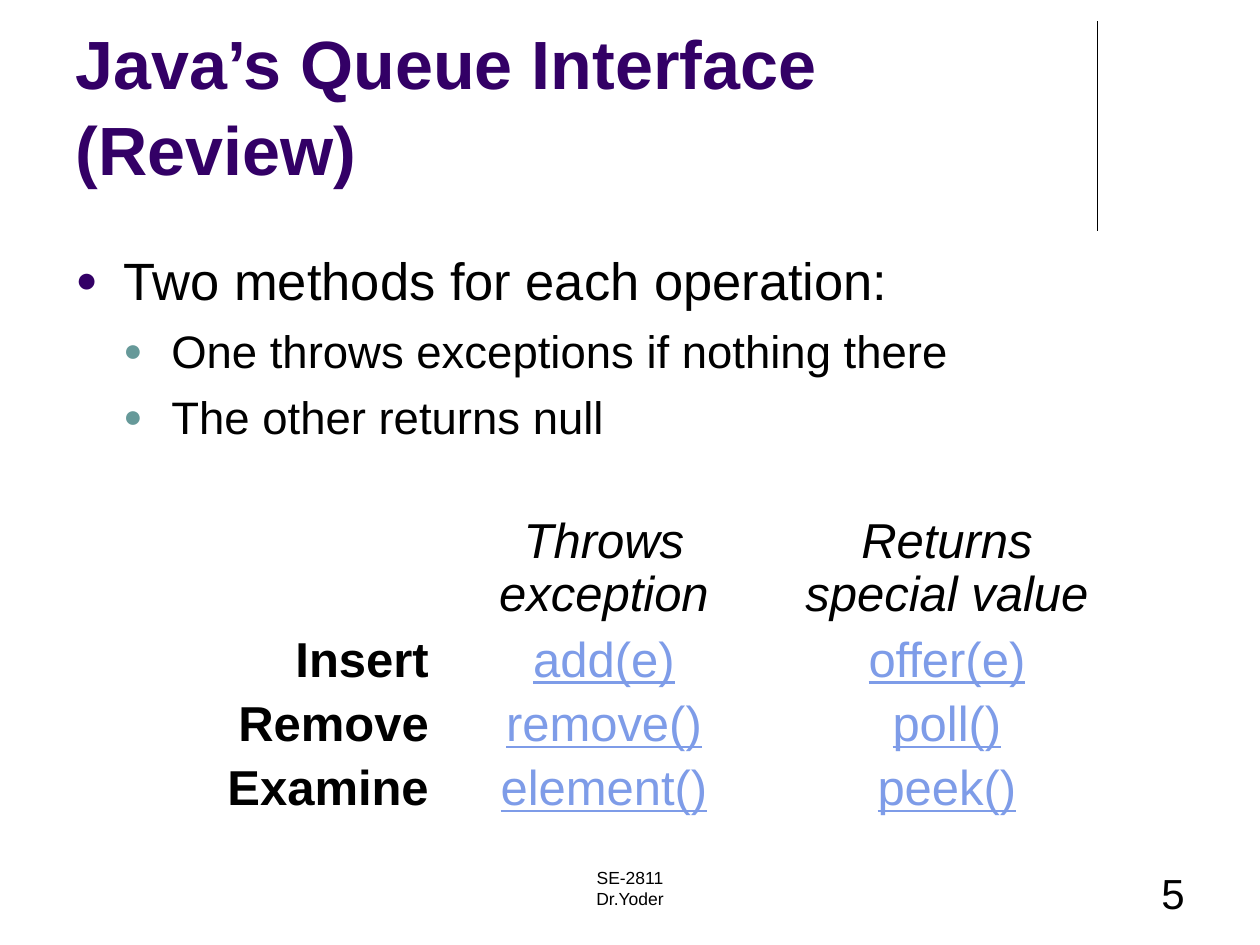
"""Build the slide on Java's Queue interface with its method table."""
from dataclasses import dataclass

from lxml import etree
from pptx import Presentation
from pptx.dml.color import RGBColor
from pptx.enum.shapes import MSO_CONNECTOR
from pptx.enum.text import MSO_ANCHOR, MSO_AUTO_SIZE, PP_ALIGN
from pptx.oxml.ns import qn
from pptx.util import Pt

LEFT, CENTER, RIGHT = PP_ALIGN.LEFT, PP_ALIGN.CENTER, PP_ALIGN.RIGHT
TOP, MIDDLE, BOTTOM = MSO_ANCHOR.TOP, MSO_ANCHOR.MIDDLE, MSO_ANCHOR.BOTTOM
NO_AUTOFIT = MSO_AUTO_SIZE.NONE
STRAIGHT = MSO_CONNECTOR.STRAIGHT

BLACK = RGBColor(0x00, 0x00, 0x00)
WHITE = RGBColor(0xFF, 0xFF, 0xFF)
PURPLE = RGBColor(0x33, 0x00, 0x66)
TEAL = RGBColor(0x66, 0x99, 0x99)
LINK_BLUE = RGBColor(0x7E, 0x9C, 0xE8)
FONT = "Arial"
INDENT = 27.36


@dataclass(frozen=True)
class Style:
    size: float
    color: RGBColor = BLACK
    align: PP_ALIGN = LEFT
    bold: bool = False
    italic: bool = False
    underline: bool = False


@dataclass(frozen=True)
class Bullet:
    text: str
    level: int
    size: float
    color: RGBColor


@dataclass(frozen=True)
class Footer:
    text: str
    left: float
    width: float
    style: Style


TITLE_STYLE = Style(39, PURPLE, bold=True)
HEADER_STYLE = Style(28, align=CENTER, italic=True)
LABEL_STYLE = Style(28, align=RIGHT, bold=True)
METHOD_STYLE = Style(28, LINK_BLUE, CENTER, underline=True)

BULLETS = [
    Bullet("Two methods for each operation:", 0, 30, PURPLE),
    Bullet("One throws exceptions if nothing there", 1, 26, TEAL),
    Bullet("The other returns null", 1, 26, TEAL),
]
FOOTERS = [
    Footer("SE-2811\nDr.Yoder", 246, 228, Style(10, align=CENTER)),
    Footer("5", 516, 168, Style(24, align=RIGHT)),
]
METHODS = [
    ["", "Throws exception", "Returns special value"],
    ["Insert", "add(e)", "offer(e)"],
    ["Remove", "remove()", "poll()"],
    ["Examine", "element()", "peek()"],
]


def format_paragraph(paragraph, style: Style) -> None:
    """Apply alignment and font settings to one paragraph."""
    paragraph.alignment = style.align
    for run in paragraph.runs:
        font = run.font
        font.name, font.size = FONT, Pt(style.size)
        font.bold, font.italic = style.bold, style.italic
        font.underline = style.underline
        font.color.rgb = style.color


def place(shape, left: float, top: float, width: float, height: float) -> None:
    """Move and size a shape in points."""
    shape.left, shape.top = Pt(left), Pt(top)
    shape.width, shape.height = Pt(width), Pt(height)


def set_bullet(paragraph, bullet: Bullet) -> None:
    """Give a paragraph its hanging indent and round bullet."""
    properties = paragraph._p.get_or_add_pPr()
    properties.set("marL", str(Pt(INDENT * (bullet.level + 1))))
    properties.set("indent", str(-Pt(INDENT)))
    color = etree.SubElement(properties, qn("a:buClr"))
    etree.SubElement(color, qn("a:srgbClr"), val=str(bullet.color))
    etree.SubElement(properties, qn("a:buSzPct"), val="70000")
    etree.SubElement(properties, qn("a:buFont"), typeface=FONT)
    etree.SubElement(properties, qn("a:buChar"), char="●")


def fill_title(title) -> None:
    """Write the slide title."""
    place(title, 36, 9.36, 594, 102.24)
    frame = title.text_frame
    frame.text = "Java’s Queue Interface (Review)"
    frame.auto_size, frame.vertical_anchor = NO_AUTOFIT, BOTTOM
    frame.paragraphs[0].line_spacing = 1.05
    format_paragraph(frame.paragraphs[0], TITLE_STYLE)


def fill_body(body) -> None:
    """Write the bulleted list."""
    place(body, 36, 135.36, 648, 140.4)
    frame = body.text_frame
    frame.text = "\n".join(bullet.text for bullet in BULLETS)
    frame.auto_size, frame.vertical_anchor = NO_AUTOFIT, TOP
    frame.margin_top = Pt(6.6)
    for index, (paragraph, bullet) in enumerate(zip(frame.paragraphs, BULLETS)):
        paragraph.level = bullet.level
        paragraph.space_before = Pt(6.5 if index else 0)
        set_bullet(paragraph, bullet)
        format_paragraph(paragraph, Style(bullet.size))


def add_divider(slide) -> None:
    """Draw the vertical rule beside the title."""
    line = slide.shapes.add_connector(
        STRAIGHT, Pt(627.12), Pt(12.24), Pt(627.12), Pt(131.76))
    line.line.color.rgb, line.line.width = BLACK, Pt(0.75)
    etree.SubElement(line._element.spPr, qn("a:effectLst"))


def add_footer(slide, footer: Footer) -> None:
    """Add one footer text box."""
    box = slide.shapes.add_textbox(
        Pt(footer.left), Pt(492), Pt(footer.width), Pt(36))
    frame = box.text_frame
    frame.word_wrap = True
    frame.text = footer.text
    for paragraph in frame.paragraphs:
        format_paragraph(paragraph, footer.style)


def add_method_table(slide) -> None:
    """Add the table of queue methods."""
    shape = slide.shapes.add_table(
        len(METHODS), len(METHODS[0]), Pt(51.12), Pt(290.88), Pt(588), Pt(171))
    table = shape.table
    table.first_row = table.horz_banding = False
    for row_index, texts in enumerate(METHODS):
        table.rows[row_index].height = Pt(34.8 if row_index else 66.6)
        for column_index, text in enumerate(texts):
            cell = table.cell(row_index, column_index)
            cell.fill.solid()
            cell.fill.fore_color.rgb = WHITE
            cell.vertical_anchor = MIDDLE
            cell.margin_left = cell.margin_right = Pt(2.16)
            cell.margin_top = cell.margin_bottom = Pt(2.16)
            if not row_index:
                style = HEADER_STYLE
            else:
                style = METHOD_STYLE if column_index else LABEL_STYLE
            cell.text_frame.text = text
            paragraph = cell.text_frame.paragraphs[0]
            paragraph.line_spacing = 0.96
            format_paragraph(paragraph, style)


def main() -> None:
    """Assemble and save the presentation."""
    presentation = Presentation()
    presentation.slide_width, presentation.slide_height = Pt(720), Pt(540)
    slide = presentation.slides.add_slide(presentation.slide_layouts[1])
    add_divider(slide)
    fill_body(slide.placeholders[1])
    fill_title(slide.shapes.title)
    for footer in FOOTERS:
        add_footer(slide, footer)
    add_method_table(slide)
    presentation.save("out.pptx")


if __name__ == "__main__":
    main()
